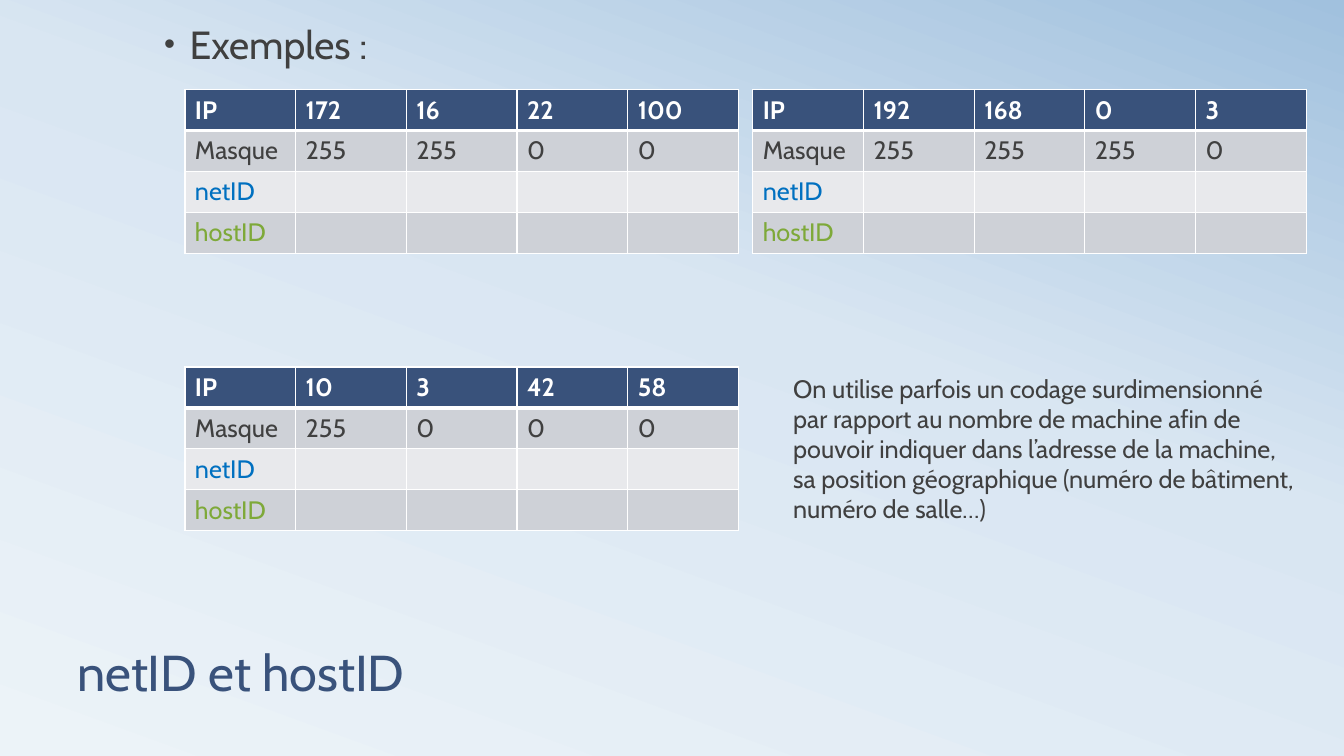
"""Build the slide on netID and hostID with its three address tables."""
from copy import deepcopy

from lxml.etree import SubElement
from pptx import Presentation
from pptx.dml.color import RGBColor
from pptx.enum.text import MSO_ANCHOR
from pptx.oxml.ns import qn
from pptx.util import Cm, Pt

NAVY, DARK, WHITE = "39527B", "404040", "FFFFFF"
BLUE, GREEN = "0070C0", "7EA939"
GREY, PALE = "CED1D7", "E8E9EC"


def rgb(value):
    return RGBColor.from_string(value)


class SlideBuilder:
    font = "Cabin"
    col_width, row_height = 2.79, 4.12 / 4

    def __init__(self, prs):
        self.s = prs.slides.add_slide(prs.slide_layouts[6])

    def background(self, stops, angle):
        fill = self.s.background.fill
        fill.gradient()
        fill.gradient_angle = angle
        first = self.s.element.xpath(".//a:gs")[0]
        first.addnext(deepcopy(first))
        for stop, (position, color) in zip(fill.gradient_stops, stops):
            stop.position = position
            stop.color.rgb = rgb(color)

    def run(self, p, text, size, color, bold=False):
        r = p.add_run()
        r.text = text
        r.font.name = self.font
        r.font.size = Pt(size)
        r.font.bold = bold
        r.font.color.rgb = rgb(color)

    def text(self, box, text, size, color, spacing=1.0, anchor=MSO_ANCHOR.TOP):
        sp = self.s.shapes.add_textbox(*map(Cm, box))
        tf = sp.text_frame
        tf.word_wrap = True
        tf.vertical_anchor = anchor
        p = tf.paragraphs[0]
        p.line_spacing = spacing
        self.run(p, text, size, color)
        return p

    def bullet(self, box, text, size, color):
        p = self.text(box, text, size, color, 0.9)
        p.space_before = Pt(18)
        pPr = p._p.get_or_add_pPr()
        pPr.set("marL", str(Cm(0.64)))
        pPr.set("indent", str(Cm(-0.64)))
        bullet_color = SubElement(pPr, qn("a:buClr"))
        SubElement(bullet_color, qn("a:srgbClr"), val=color)
        SubElement(pPr, qn("a:buSzPct"), val="80000")
        SubElement(pPr, qn("a:buFont"), typeface="Arial")
        SubElement(pPr, qn("a:buChar"), char="•")

    def borders(self, cell, bottom):
        tcPr = cell._tc.get_or_add_tcPr()
        for side, width in (("L", 1), ("R", 1), ("T", 1), ("B", bottom)):
            ln = SubElement(tcPr, qn(f"a:ln{side}"), w=str(Pt(width)))
            fill = SubElement(ln, qn("a:solidFill"))
            SubElement(fill, qn("a:srgbClr"), val=WHITE)

    def address_table(self, left, top, ip, mask):
        rows = (
            (["IP", *ip], WHITE, NAVY),
            (["Masque", *mask], DARK, GREY),
            (["netID"], BLUE, PALE),
            (["hostID"], GREEN, GREY),
        )
        size = Cm(5 * self.col_width), Cm(4 * self.row_height)
        table = self.s.shapes.add_table(4, 5, Cm(left), Cm(top), *size).table
        for i, (texts, color, fill) in enumerate(rows):
            table.rows[i].height = Cm(self.row_height)
            for j, cell in enumerate(table.rows[i].cells):
                table.columns[j].width = Cm(self.col_width)
                self.borders(cell, 3 if i == 0 else 1)
                cell.fill.solid()
                cell.fill.fore_color.rgb = rgb(fill)
                if j < len(texts):
                    text_color = color if j == 0 or i == 0 else DARK
                    p = cell.text_frame.paragraphs[0]
                    self.run(p, texts[j], 18, text_color, bold=i == 0)


def main():
    prs = Presentation()
    prs.slide_width, prs.slide_height = Cm(33.87), Cm(19.05)
    slide = SlideBuilder(prs)
    slide.background([(0, "ECF3F8"), (0.58, "D9E6F2"), (1, "A1C1DE")], 70)
    slide.text((1.7, 14.83, 30.48, 2.97), "netID et hostID", 36, NAVY, 0.8, MSO_ANCHOR.BOTTOM)
    slide.bullet((3.89, 0.51, 26.31, 4.75), "Exemples :", 28, DARK)
    left, right, top, bottom = 4.66, 18.97, 2.26, 9.25
    slide.address_table(left, top, ["172", "16", "22", "100"], ["255", "255", "0", "0"])
    slide.address_table(right, top, ["192", "168", "0", "3"], ["255", "255", "255", "0"])
    slide.address_table(left, bottom, ["10", "3", "42", "58"], ["255", "0", "0", "0"])
    slide.text(
        (19.74, 9.27, 13.21, 4.11),
        "On utilise parfois un codage surdimensionné par rapport au nombre de machine "
        "afin de pouvoir indiquer dans l’adresse de la machine, sa position géographique "
        "(numéro de bâtiment, numéro de salle…)",
        18, DARK,
    )
    prs.save("out.pptx")


if __name__ == "__main__":
    main()
